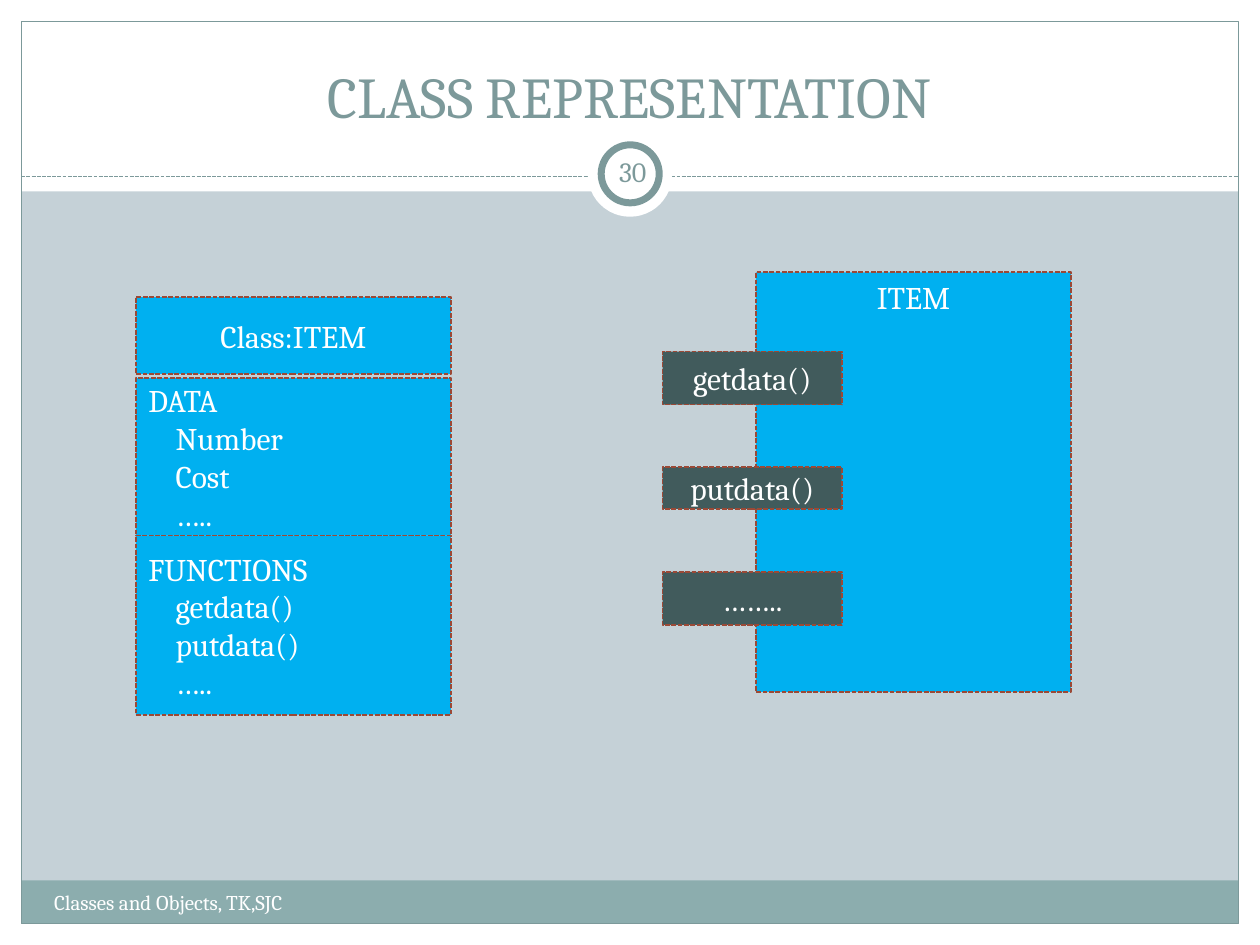
from dataclasses import dataclass

from lxml.etree import SubElement
from pptx import Presentation
from pptx.dml.color import RGBColor
from pptx.enum.dml import MSO_LINE
from pptx.enum.shapes import MSO_CONNECTOR, MSO_SHAPE
from pptx.enum.text import MSO_ANCHOR, PP_ALIGN
from pptx.oxml.ns import qn
from pptx.util import Cm, Pt


@dataclass(frozen=True)
class Theme:
    font: str = "Cambria"
    background: str = "C5D1D7"
    white: str = "FFFFFF"
    accent: str = "7C999A"
    band: str = "8CADAE"
    panel: str = "00B0F0"
    method: str = "415B5C"
    outline: str = "9B4936"
    title_size: float = 33
    body_size: float = 18
    number_size: float = 16
    footer_size: float = 12
    thin: float = 0.75
    dashed: float = 0.9
    ring: float = 4


THEME = Theme()
WIDTH, HEIGHT, MARGIN = 25.4, 19.05, 0.43
INDENT = 0.55


def color(value):
    return RGBColor.from_string(value)


def style_line(line, value, width, dash=None):
    line.color.rgb = color(value)
    line.width = Pt(width)
    if dash:
        line.dash_style = dash


def add_box(slide, bounds, fill=None, kind=MSO_SHAPE.RECTANGLE):
    box = slide.shapes.add_shape(kind, *map(Cm, bounds))
    box.shadow.inherit = False
    box.line.fill.background()
    if fill:
        box.fill.solid()
        box.fill.fore_color.rgb = color(fill)
    else:
        box.fill.background()
    return box


def write_text(box, lines, size, value, align=PP_ALIGN.LEFT, anchor=MSO_ANCHOR.MIDDLE):
    frame = box.text_frame
    frame.word_wrap = True
    frame.vertical_anchor = anchor
    for index, line in enumerate(lines):
        para = frame.add_paragraph() if index else frame.paragraphs[0]
        para.alignment = align
        if index:
            para._p.get_or_add_pPr().set("marL", str(Cm(INDENT)))
        span = para.add_run()
        span.text = line
        span.font.name = THEME.font
        span.font.size = Pt(size)
        span.font.color.rgb = color(value)


def add_label(slide, bounds, text, size, value, align, anchor, inset=None):
    box = slide.shapes.add_textbox(*map(Cm, bounds))
    write_text(box, [text], size, value, align, anchor)
    if inset is not None:
        frame = box.text_frame
        frame.margin_left = frame.margin_right = Cm(inset)
        frame.margin_top = frame.margin_bottom = Cm(inset)


def add_panel(slide, bounds, lines, fill=THEME.panel, align=PP_ALIGN.CENTER,
              anchor=MSO_ANCHOR.MIDDLE):
    box = add_box(slide, bounds, fill)
    style_line(box.line, THEME.outline, THEME.dashed, MSO_LINE.SQUARE_DOT)
    write_text(box, lines, THEME.body_size, THEME.white, align, anchor)


def add_divider(slide, top):
    divider = slide.shapes.add_connector(
        MSO_CONNECTOR.STRAIGHT, Cm(MARGIN), Cm(top), Cm(WIDTH - MARGIN), Cm(top))
    style_line(divider.line, THEME.accent, THEME.thin, MSO_LINE.SQUARE_DOT)
    SubElement(divider._element.spPr, qn("a:effectLst"))


def add_page_frame(slide):
    inner_width, inner_height = WIDTH - 2 * MARGIN, HEIGHT - 2 * MARGIN
    for bounds in (
        (0, HEIGHT - MARGIN, WIDTH, MARGIN),
        (0, 0, WIDTH, 3.86),
        (0, 0, MARGIN, HEIGHT),
        (WIDTH - MARGIN, 0, MARGIN, HEIGHT),
    ):
        add_box(slide, bounds, THEME.white)
    add_box(slide, (MARGIN, 17.75, inner_width, 0.87), THEME.band)
    border = add_box(slide, (MARGIN, MARGIN, inner_width, inner_height))
    style_line(border.line, THEME.accent, THEME.thin)
    add_divider(slide, 3.56)
    add_box(slide, (11.85, 2.67, 1.7, 1.7), THEME.white, MSO_SHAPE.OVAL)
    ring = add_box(slide, (12.12, 2.92, 1.17, 1.17), THEME.white, MSO_SHAPE.OVAL)
    style_line(ring.line, THEME.accent, THEME.ring)


def add_page_labels(slide):
    add_label(slide, (0.84, 0.64, 23.7, 2.11), "CLASS REPRESENTATION",
              THEME.title_size, THEME.accent, PP_ALIGN.CENTER, MSO_ANCHOR.BOTTOM)
    add_label(slide, (0.84, 17.81, 9.96, 1.02), "Classes and Objects, TK,SJC",
              THEME.footer_size, THEME.white, PP_ALIGN.LEFT, MSO_ANCHOR.TOP)
    add_label(slide, (12.12, 2.84, 1.27, 1.22), "30", THEME.number_size,
              THEME.accent, PP_ALIGN.CENTER, MSO_ANCHOR.MIDDLE, 0.13)


def add_class_table(slide):
    left, width = 2.74, 6.35
    add_panel(slide, (left, 5.99, width, 1.55), ["Class:ITEM"])
    for top, height, lines in (
        (7.62, 3.18, ["DATA", "Number", "Cost", "….."]),
        (10.8, 3.61, ["FUNCTIONS", "getdata()", "putdata()", "….."]),
    ):
        add_panel(slide, (left, top, width, height), lines, align=PP_ALIGN.LEFT)


def add_item_diagram(slide):
    add_panel(slide, (15.24, 5.49, 6.35, 8.46), ["ITEM"], anchor=MSO_ANCHOR.TOP)
    for top, height, name in (
        (7.09, 1.07, "getdata()"),
        (9.42, 0.84, "putdata()"),
        (11.53, 1.07, "…….."),
    ):
        add_panel(slide, (13.36, top, 3.61, height), [name], THEME.method)


def main():
    deck = Presentation()
    deck.slide_width, deck.slide_height = Cm(WIDTH), Cm(HEIGHT)
    page = deck.slides.add_slide(deck.slide_layouts[6])
    page.background.fill.solid()
    page.background.fill.fore_color.rgb = color(THEME.background)
    add_page_frame(page)
    add_page_labels(page)
    add_class_table(page)
    add_item_diagram(page)
    deck.save("out.pptx")


if __name__ == "__main__":
    main()
